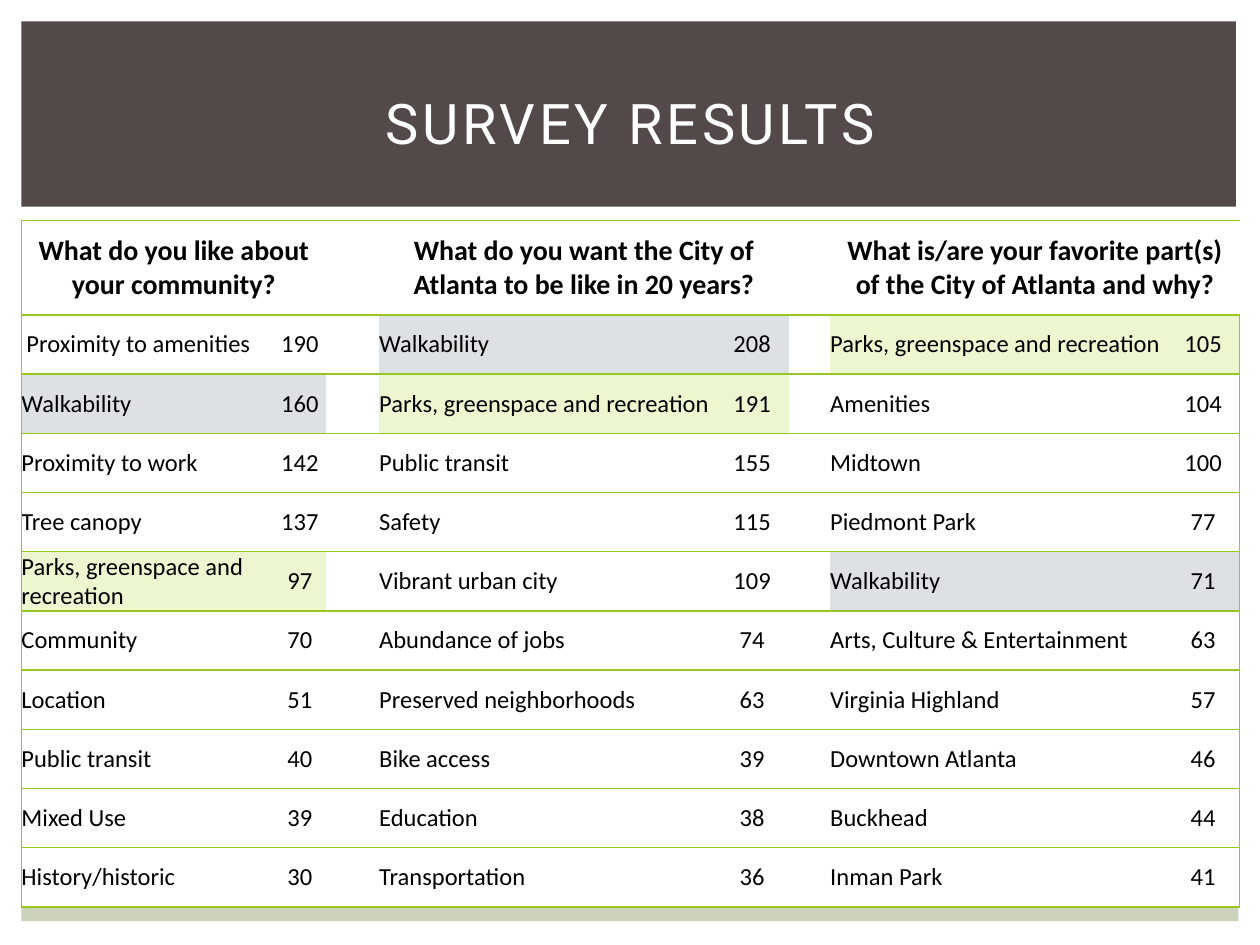
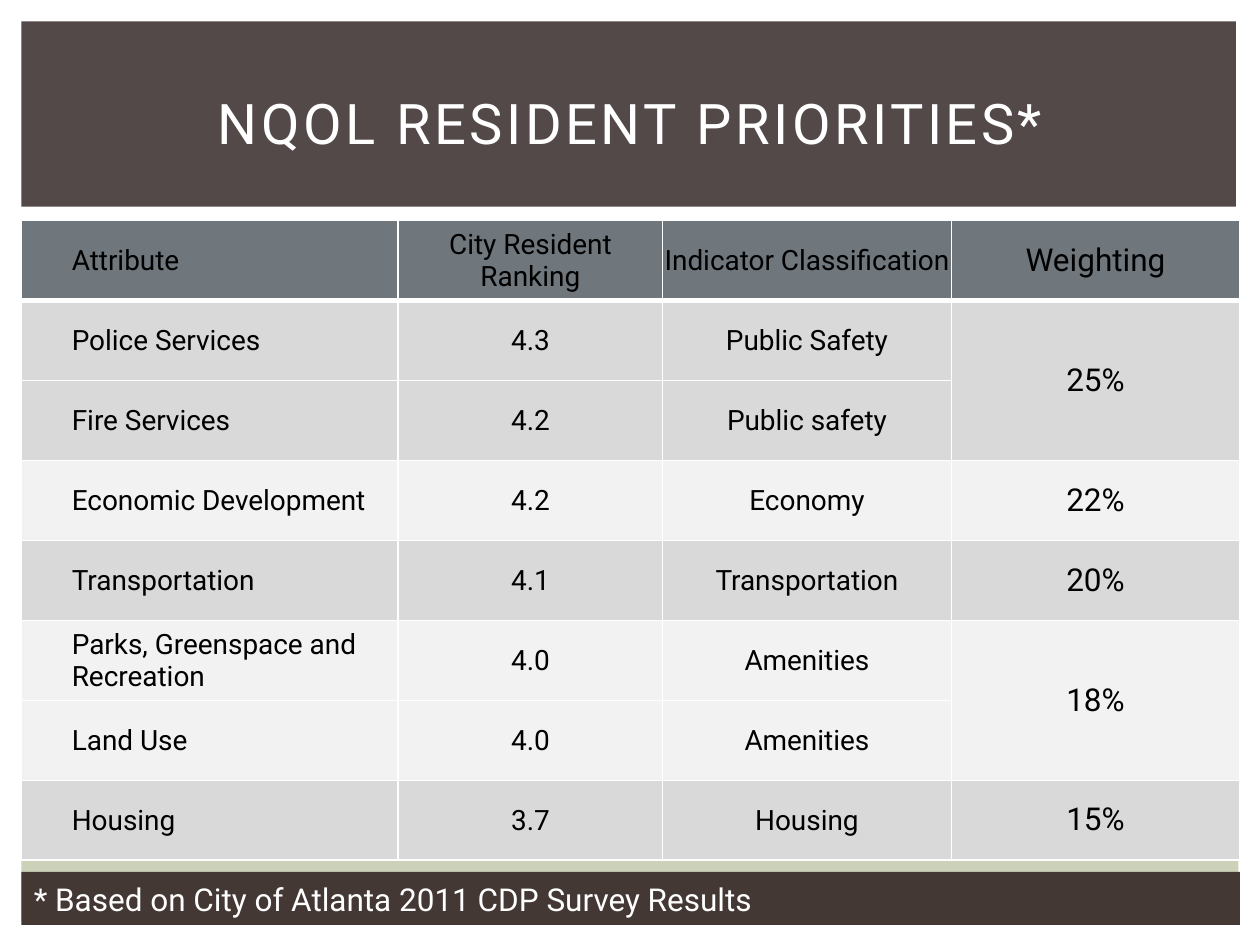
from pptx import Presentation
from pptx.dml.color import RGBColor
from pptx.enum.shapes import MSO_SHAPE
from pptx.enum.text import MSO_ANCHOR, PP_ALIGN
from pptx.oxml import parse_xml
from pptx.oxml.ns import nsdecls
from pptx.util import Inches, Pt

COLORS = {
    "white": "FFFFFF",
    "black": "000000",
    "panel": "CCD1B9",
    "band": "534949",
    "footnote": "443835",
    "rule": "98C723",
    "walkability": "DDE1E4",
    "parks": "ECF7D0",
    "header": "6F777D",
    "dark_row": "D9D9D9",
    "light_row": "F2F2F2",
}
TOPIC_FILLS = {
    "Walkability": "walkability",
    "Parks, greenspace and recreation": "parks",
}
QUESTIONS = [
    ("What do you like about your community?", [
        ("Proximity to amenities", 190), ("Walkability", 160),
        ("Proximity to work", 142), ("Tree canopy", 137),
        ("Parks, greenspace and recreation", 97), ("Community", 70),
        ("Location", 51), ("Public transit", 40), ("Mixed Use", 39),
        ("History/historic", 30)]),
    ("What do you want the City of Atlanta to be like in 20 years?", [
        ("Walkability", 208), ("Parks, greenspace and recreation", 191),
        ("Public transit", 155), ("Safety", 115),
        ("Vibrant urban city", 109), ("Abundance of jobs", 74),
        ("Preserved neighborhoods", 63), ("Bike access", 39),
        ("Education", 38), ("Transportation", 36)]),
    ("What is/are your favorite part(s)\nof the City of Atlanta and why?", [
        ("Parks, greenspace and recreation", 105), ("Amenities", 104),
        ("Midtown", 100), ("Piedmont Park", 77), ("Walkability", 71),
        ("Arts, Culture & Entertainment", 63), ("Virginia Highland", 57),
        ("Downtown Atlanta", 46), ("Buckhead", 44), ("Inman Park", 41)]),
]
PRIORITY_HEADERS = ["Attribute", "City Resident Ranking",
                    "Indicator Classification", "Weighting"]
PRIORITY_GROUPS = [
    ("25%", [("Police Services", "4.3", "Public Safety"),
             ("Fire Services", "4.2", "Public safety")]),
    ("22%", [("Economic Development", "4.2", "Economy")]),
    ("20%", [("Transportation", "4.1", "Transportation")]),
    ("18%", [("Parks, Greenspace and Recreation", "4.0", "Amenities"),
             ("Land Use", "4.0", "Amenities")]),
    ("15%", [("Housing", "3.7", "Housing")]),
]


def color(name):
    """Return the named colour."""
    return RGBColor.from_string(COLORS[name])


def style_text(frame, size, font_name, font_color, align, bold=False):
    """Apply one text style to every paragraph of a frame."""
    for paragraph in frame.paragraphs:
        paragraph.alignment = align
        font = paragraph.font
        font.size, font.name, font.bold = Pt(size), font_name, bold
        font.color.rgb = color(font_color)


def add_band(slide, left, top, width, height, fill):
    """Add a plain filled rectangle."""
    band = slide.shapes.add_shape(MSO_SHAPE.RECTANGLE, Inches(left), Inches(top),
                                  Inches(width), Inches(height))
    band.shadow.inherit = False
    band.fill.solid()
    band.fill.fore_color.rgb = color(fill)
    band.line.fill.background()
    return band


def add_titled_slide(presentation, title):
    """Add a slide with the shared panel, band and title."""
    slide = presentation.slides.add_slide(presentation.slide_layouts[6])
    add_band(slide, 0.17, 1.79, 9.66, 5.52, "panel")
    add_band(slide, 0.17, 0.17, 9.64, 1.47, "band")
    box = slide.shapes.add_textbox(Inches(0.42), Inches(0.39), Inches(9.17), Inches(1.15))
    frame = box.text_frame
    frame.word_wrap = True
    frame.vertical_anchor = MSO_ANCHOR.MIDDLE
    frame.text = title
    style_text(frame, 32, "Roboto", "white", PP_ALIGN.CENTER)
    frame.paragraphs[0].runs[0].font._element.set("spc", "200")
    return slide


def add_footnote(slide, text):
    """Add the dark footnote bar."""
    bar = add_band(slide, 0.17, 6.92, 9.67, 0.42, "footnote")
    bar.text_frame.word_wrap = True
    bar.text_frame.vertical_anchor = MSO_ANCHOR.MIDDLE
    bar.text_frame.text = text
    style_text(bar.text_frame, 18, "Roboto", "white", PP_ALIGN.LEFT)


def add_grid(slide, column_widths, row_heights):
    """Add an unstyled table below the title band."""
    frame = slide.shapes.add_table(
        len(row_heights), len(column_widths), Inches(0.17), Inches(1.75),
        Inches(sum(column_widths)), Inches(sum(row_heights)))
    table = frame.table
    table.first_row = table.horz_banding = False
    for column, width in zip(table.columns, column_widths):
        column.width = Inches(width)
    for row, height in zip(table.rows, row_heights):
        row.height = Inches(height)
    return table


def set_borders(cell, borders):
    """Draw the cell sides given as {side: (colour, points)} and clear the rest."""
    properties = cell._tc.get_or_add_tcPr()
    for index, side in enumerate("LRTB"):
        name, points = borders.get(side, (None, 0))
        fill = (f'<a:solidFill><a:srgbClr val="{COLORS[name]}"/></a:solidFill>'
                if name else "<a:noFill/>")
        line = f'<a:ln{side} {nsdecls("a")} w="{Pt(points)}">{fill}</a:ln{side}>'
        properties.insert(index, parse_xml(line))


def fill_cell(cell, fill, borders):
    """Set the background and borders of a cell."""
    cell.fill.solid()
    cell.fill.fore_color.rgb = color(fill)
    set_borders(cell, borders)


def write_cell(cell, text, size, font_name, align, margins, bold=False):
    """Write middle-anchored black text; margins run left, right, top, bottom."""
    cell.text = text
    cell.vertical_anchor = MSO_ANCHOR.MIDDLE
    (cell.margin_left, cell.margin_right,
     cell.margin_top, cell.margin_bottom) = map(Inches, margins)
    style_text(cell.text_frame, size, font_name, "black", align, bold)


def add_survey_table(slide):
    """Add the answers to the three questions side by side."""
    answer_count = len(QUESTIONS[0][1])
    widths = [2, 0.42, 0.42, 2.67, 0.58, 0.33, 2.67, 0.58]
    table = add_grid(slide, widths, [0.75] + [0.47] * answer_count)
    rule = ("rule", 1)
    for row in range(answer_count + 1):
        for column in range(len(widths)):
            borders = {"T": rule, "B": rule}
            if column == 0:
                borders["L"] = rule
            if column == len(widths) - 1:
                borders["R"] = rule
            topic = ""
            if row and column % 3 < 2:
                topic = QUESTIONS[column // 3][1][row - 1][0]
            fill_cell(table.cell(row, column), TOPIC_FILLS.get(topic, "white"), borders)
    for index, (question, answers) in enumerate(QUESTIONS):
        column = index * 3
        heading = table.cell(0, column)
        heading.merge(table.cell(0, column + 1))
        write_cell(heading, question, 16, "Calibri", PP_ALIGN.CENTER, [0] * 4, True)
        for row, (topic, count) in enumerate(answers, 1):
            indent = 0.04 if (row, column) == (1, 0) else 0
            write_cell(table.cell(row, column), topic, 14, "Calibri",
                       PP_ALIGN.LEFT, [indent, 0, 0, 0])
            write_cell(table.cell(row, column + 1), str(count), 14, "Calibri",
                       PP_ALIGN.CENTER, [0] * 4)


def write_priority_row(table, row, texts, fill):
    """Write one row of the priorities table."""
    thin, thick = ("white", 1), ("white", 3)
    borders = {"L": thin, "R": thin, "T": thick if row == 1 else thin,
               "B": thick if row == 0 else thin}
    for column, text in enumerate(texts):
        cell = table.cell(row, column)
        fill_cell(cell, fill, borders)
        if column == 3:
            size, margins = 18, [0.1, 0.1, 0.05, 0.05]
        else:
            size, margins = 16, [0.01 if column else 0.4, 0.01, 0.01, 0]
        align = PP_ALIGN.CENTER if column else PP_ALIGN.LEFT
        write_cell(cell, text, size, "Roboto", align, margins)


def add_priorities_table(slide):
    """Add the ranked attributes with one weighting per group."""
    row_count = 1 + sum(len(members) for _, members in PRIORITY_GROUPS)
    table = add_grid(slide, [2.99, 2.1, 2.29, 2.29], [5.08 / row_count] * row_count)
    write_priority_row(table, 0, PRIORITY_HEADERS, "header")
    row = 1
    for index, (weighting, members) in enumerate(PRIORITY_GROUPS):
        fill = "light_row" if index % 2 else "dark_row"
        for offset, member in enumerate(members):
            texts = [*member, "" if offset else weighting]
            write_priority_row(table, row + offset, texts, fill)
        last = row + len(members) - 1
        if last > row:
            table.cell(row, 3).merge(table.cell(last, 3))
        row = last + 1


def main():
    """Build and save the presentation."""
    presentation = Presentation()
    presentation.slide_width, presentation.slide_height = Inches(10), Inches(7.5)
    add_survey_table(add_titled_slide(presentation, "SURVEY RESULTS"))
    priorities = add_titled_slide(presentation, "NQOL RESIDENT PRIORITIES*")
    add_footnote(priorities, "* Based on City of Atlanta 2011 CDP Survey Results")
    add_priorities_table(priorities)
    presentation.save("out.pptx")


if __name__ == "__main__":
    main()
